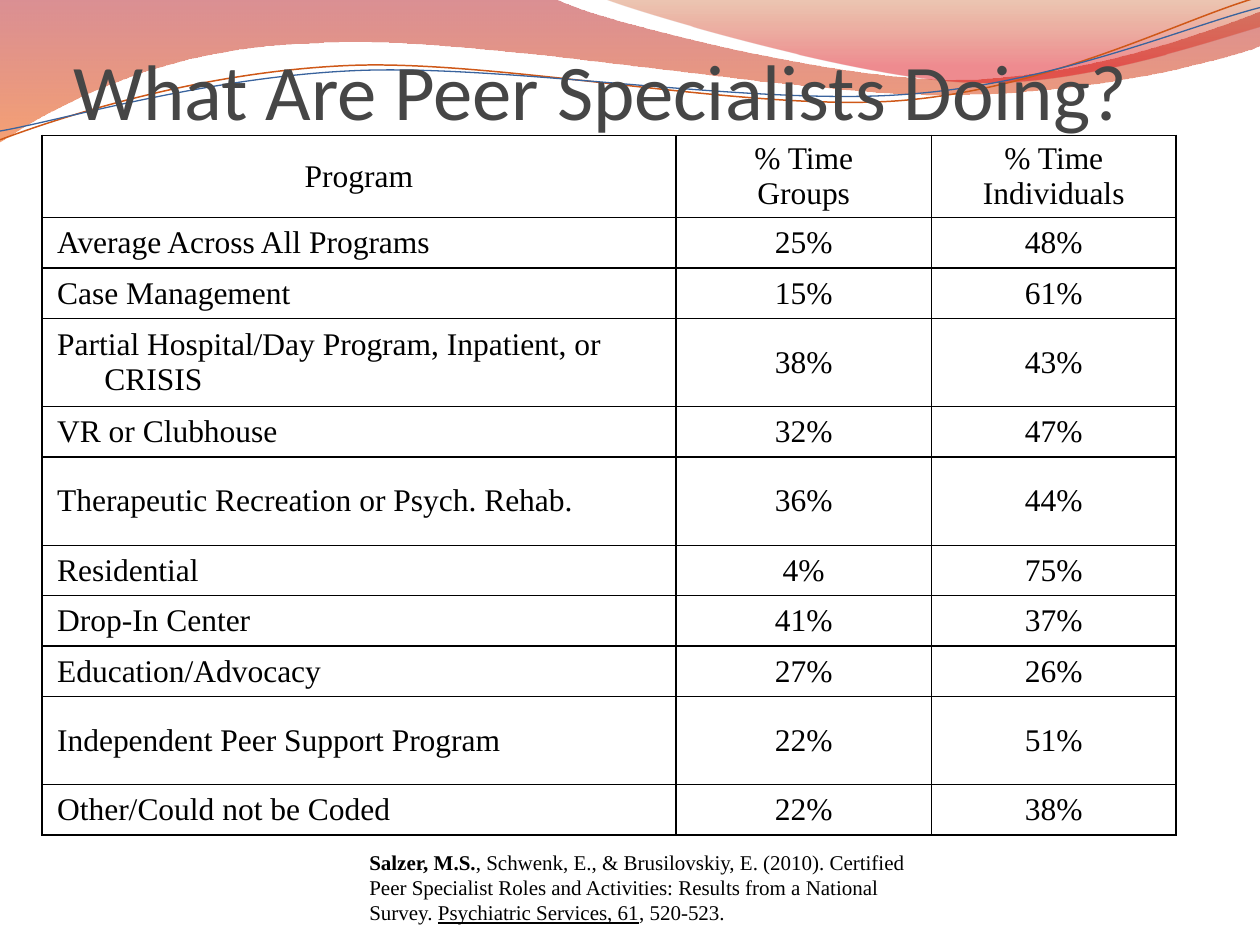
"""Build a slide with a table of how peer specialists spend their time."""
from dataclasses import dataclass
from math import cos, radians, sin

from lxml.etree import SubElement
from pptx import Presentation
from pptx.dml.color import RGBColor as Rgb
from pptx.enum.text import MSO_ANCHOR as Anchor, PP_ALIGN as Align
from pptx.oxml.ns import qn
from pptx.util import Inches, Pt


@dataclass(frozen=True)
class Theme:
    ink: str = "000000"
    title_ink: str = "464646"
    title_font: str = "Calibri"
    body_font: str = "Times New Roman"
    title_size: int = 45
    table_size: int = 18
    citation_size: int = 12
    border: int = 1
    wave_stops: tuple = ((0, "AF0911", 45), (100, "EE5300", 55))
    crest_stops: tuple = ((0, "C24400", 30), (80, "DC000B", 45))
    orange_line: tuple = ("CF5818", 0.85)
    blue_line: tuple = ("39639D", 0.75)


theme = Theme()
deck = Presentation()
deck.slide_width, deck.slide_height = Inches(10), Inches(7.5)
page = deck.slides.add_slide(deck.slide_layouts[5])
shapes = page.shapes


def grid(units):
    """Length of a number of grid units, each a hundredth of the slide's width."""
    return round(units * deck.slide_width / 100)


def draw_outline(start, segments, closed, tilt=0, pivot=(0, 0)):
    """Draw lines (one point) and Bezier curves (three points) as one tilted freeform."""
    sine, cosine = sin(radians(-tilt)), cos(radians(-tilt))
    (start,), *segments = [
        [(grid(pivot[0] + (x - pivot[0]) * cosine - (y - pivot[1]) * sine),
          grid(pivot[1] + (x - pivot[0]) * sine + (y - pivot[1]) * cosine))
         for x, y in segment]
        for segment in ([start], *segments)]
    builder = shapes.build_freeform(*start)
    builder.add_line_segments([segment[-1] for segment in segments], close=closed)
    outline = builder.convert_to_shape()
    for line, segment in zip(list(outline._element.iter(qn("a:lnTo"))), segments):
        if len(segment) == 3:
            curve = line.makeelement(qn("a:cubicBezTo"))
            for x, y in segment:
                SubElement(curve, qn("a:pt"), x=str(x - outline.left), y=str(y - outline.top))
            line.getparent().replace(line, curve)
    outline.rotation = tilt
    outline.shadow.inherit = False
    return outline


bands = [
    (theme.wave_stops, (0, 0), [
        [(44, -0.1)],
        [(47.6, 1.7), (66.4, 6.3), (75.8, 6.3)],
        [(85.3, 6.3), (95.8, 2.6), (100, 0.9)],
        [(100.1, 3.6)],
        [(98.3, 4.4), (87, 7.6), (74.6, 7.5)],
        [(62.2, 7.5), (38.2, 2.8), (25.7, 3.4)],
        [(12.9, 3.6), (4.6, 8.3), (-0.1, 11.3)],
    ]),
    (theme.crest_stops, (47.9, -0.1), [
        [(50.9, 1.1), (68.2, 6.2), (76.9, 6.5)],
        [(85.6, 6.9), (96.1, 3.2), (100, 2.1)],
        [(100, 0)],
    ]),
]
for stops, start, segments in bands:
    band = draw_outline(start, segments, True)
    band.line.fill.background()
    band.fill.gradient()
    band.fill.gradient_angle = 270
    stop_elements = band._element.iter(qn("a:gs"))
    for stop, element, (position, color, opacity) in zip(
            band.fill.gradient_stops, stop_elements, stops):
        stop.color.rgb = Rgb.from_string(color)
        element.set("pos", str(position * 1000))
        SubElement(element[0], qn("a:alpha"), val=str(opacity * 1000))

strands = [
    (theme.orange_line, (49.9, 5.75), (0, 11.1), [
        [(4.8, 9.3), (15.8, 5.7), (27.7, 5.2)],
        [(39.5, 4.7), (59.3, 8.9), (71.3, 8)],
        [(83.3, 7.1), (93.8, 1.5), (99.8, -0.2)],
    ]),
    (theme.blue_line, (49.95, 5.9), (0, 10.4), [
        [(4.7, 9.6), (16.4, 6.1), (28.3, 5.6)],
        [(40.3, 5.1), (59.7, 8.4), (71.7, 7.5)],
        [(83.6, 6.7), (94.1, 2.1), (100, 0.6)],
    ]),
]
for (color, width), pivot, start, segments in strands:
    strand = draw_outline(start, segments, False, -2.7, pivot)
    strand.fill.background()
    strand.line.color.rgb = Rgb.from_string(color)
    strand.line.width = Pt(width)

title = shapes.title
shapes._spTree.append(title._element)
title.left, title.top, title.width, title.height = map(grid, (5.8, -1.7, 90, 12.5))
frame = title.text_frame
frame.text = "What Are Peer Specialists Doing?"
frame.word_wrap = True
frame.vertical_anchor = Anchor.BOTTOM
frame.margin_left = frame.margin_right = frame.margin_bottom = 0
frame.margin_top = grid(0.5)
para = frame.paragraphs[0]
para.alignment = Align.LEFT
para.font.name, para.font.size = theme.title_font, Pt(theme.title_size)
para.font.color.rgb = Rgb.from_string(theme.title_ink)

single, double = 4, 7
records = [
    (6.3, "Program", "% Time\nGroups", "% Time\nIndividuals"),
    (single, "Average Across All Programs", "25%", "48%"),
    (single, "Case Management", "15%", "61%"),
    (double, "Partial Hospital/Day Program, Inpatient, or CRISIS", "38%", "43%"),
    (single, "VR or Clubhouse", "32%", "47%"),
    (double, "Therapeutic Recreation or Psych. Rehab.", "36%", "44%"),
    (single, "Residential", "4%", "75%"),
    (single, "Drop-In Center", "41%", "37%"),
    (single, "Education/Advocacy", "27%", "26%"),
    (double, "Independent Peer Support Program", "22%", "51%"),
    (single, "Other/Could not be Coded", "22%", "38%"),
]
columns = (50.3, 20.3, 19.4)
table = shapes.add_table(len(records), len(columns),
                         *map(grid, (3.34, 10.74, sum(columns), 56.1))).table
table.first_row = table.horz_banding = False
for column, width in zip(table.columns, columns):
    column.width = grid(width)
for row_index, (height, *texts) in enumerate(records):
    table.rows[row_index].height = grid(height)
    for column_index, text in enumerate(texts):
        cell = table.cell(row_index, column_index)
        cell.text = text
        cell.vertical_anchor = Anchor.MIDDLE
        cell.margin_left = cell.margin_right = grid(1.2)
        cell.margin_top = cell.margin_bottom = grid(0.5)
        properties = cell._tc.get_or_add_tcPr()
        for side in ("a:lnL", "a:lnR", "a:lnT", "a:lnB"):
            edge = SubElement(properties, qn(side), w=str(Pt(theme.border)))
            paint = SubElement(edge, qn("a:solidFill"))
            SubElement(paint, qn("a:srgbClr"), val=theme.ink)
        cell.fill.background()
        for para in cell.text_frame.paragraphs:
            indent = para._p.get_or_add_pPr()
            indent.set("marL", str(grid(3.75)))
            indent.set("indent", str(-grid(3.75)))
            left_aligned = row_index > 0 and column_index == 0
            para.alignment = Align.LEFT if left_aligned else Align.CENTER
            para.font.name, para.font.size = theme.body_font, Pt(theme.table_size)
            para.font.color.rgb = Rgb.from_string(theme.ink)

citation = shapes.add_textbox(*map(grid, (23.33, 66.84, 50, 7.1)))
frame = citation.text_frame
frame.word_wrap = True
frame.vertical_anchor = Anchor.MIDDLE
para = frame.paragraphs[0]
para._p.get_or_add_pPr().set("marL", str(grid(5)))
para.font.name, para.font.size = theme.body_font, Pt(theme.citation_size)
para.font.color.rgb = Rgb.from_string(theme.ink)
for text, bold, underline in (
    ("Salzer, M.S.", True, None),
    (", Schwenk, E., & Brusilovskiy, E. (2010). Certified Peer Specialist Roles "
     "and Activities: Results from a National Survey. ", None, None),
    ("Psychiatric Services, 61", None, True),
    (", 520-523.", None, None),
):
    span = para.add_run()
    span.text = text
    span.font.bold, span.font.underline = bold, underline

deck.save("out.pptx")
